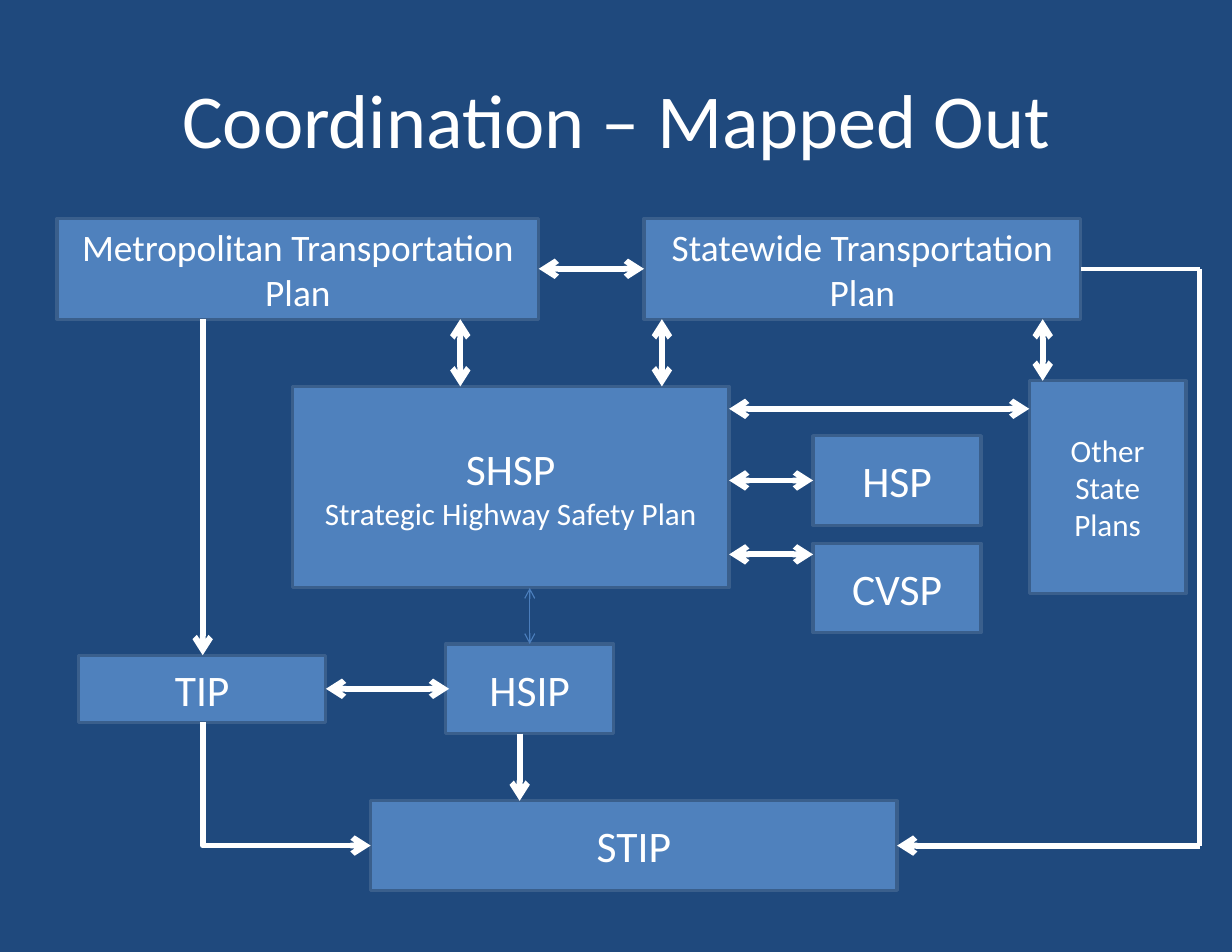
from lxml import etree
from pptx import Presentation
from pptx.dml.color import RGBColor
from pptx.enum.shapes import MSO_CONNECTOR, MSO_SHAPE
from pptx.enum.text import MSO_ANCHOR, PP_ALIGN
from pptx.oxml.ns import qn
from pptx.util import Pt

RECTANGLE = MSO_SHAPE.RECTANGLE
STRAIGHT, ELBOW = MSO_CONNECTOR.STRAIGHT, MSO_CONNECTOR.ELBOW
CENTER, MIDDLE = PP_ALIGN.CENTER, MSO_ANCHOR.MIDDLE

PX = 9144  # 100 px to the inch
FONT = "Calibri"
NAVY, BLUE, EDGE, THIN_BLUE, WHITE = "1F497D", "4F81BD", "3A5F8C", "4B7EBC", "FFFFFF"

# Left, top, width, height, then (text, size) for each paragraph
BOXES = [
    (575, 195, 390, 90, [("Statewide Transportation Plan", 24)]),
    (398, 575, 150, 80, [("HSIP", 28)]),
    (51, 195, 430, 90, [("Metropolitan Transportation Plan", 24)]),
    (261, 345, 390, 180, [("SHSP", 28), ("Strategic Highway Safety Plan", 20)]),
    (726, 389, 150, 80, [("HSP", 28)]),
    (919, 340, 140, 190, [("Other State", 20), ("Plans", 20)]),
    (726, 485, 150, 80, [("CVSP", 28)]),
    (70, 585, 221, 60, [("TIP", 28)]),
    (331, 715, 470, 80, [("STIP", 28)]),
]

# Start x, start y, end x, end y
TWO_WAY = [
    (575, 240, 481, 240),  # Statewide - Metropolitan
    (411, 285, 411, 345),  # Metropolitan - SHSP
    (591, 285, 591, 345),  # Statewide - SHSP
    (931, 285, 931, 340),  # Statewide - Other State Plans
    (651, 365, 919, 365),  # SHSP - Other State Plans
    (651, 429, 726, 429),  # SHSP - HSP
    (651, 495, 726, 495),  # SHSP - CVSP
    (401, 615, 291, 615),  # HSIP - TIP
]
ONE_WAY = [
    (181, 285, 181, 585),   # Metropolitan to TIP
    (464, 655, 464, 715),   # HSIP to STIP
    (1071, 755, 801, 755),  # Statewide to STIP, last leg
]


def px(*lengths):
    return [length * PX for length in lengths]


def color(hex_text):
    return RGBColor.from_string(hex_text)


def write(frame, lines):
    frame.text = "\n".join(text for text, size in lines)
    frame.word_wrap = True
    frame.vertical_anchor = MIDDLE
    for paragraph, (text, size) in zip(frame.paragraphs, lines):
        paragraph.alignment = CENTER
        for span in paragraph.runs:
            span.font.name = FONT
            span.font.size = Pt(size)
            span.font.color.rgb = color(WHITE)


def add_title(page, text):
    title = page.shapes.title
    title.left, title.top, title.width, title.height = px(55, 34, 990, 142)
    write(title.text_frame, [(text, 49)])


def add_box(page, left, top, width, height, lines):
    box = page.shapes.add_shape(RECTANGLE, *px(left, top, width, height))
    box.shadow.inherit = False
    box.fill.solid()
    box.fill.fore_color.rgb = color(BLUE)
    box.line.color.rgb = color(EDGE)
    box.line.width = Pt(2)
    write(box.text_frame, lines)


def add_line(page, ends, arrows=(), width=3.75, line_color=WHITE, kind=STRAIGHT):
    connector = page.shapes.add_connector(kind, *px(*ends))
    connector.line.color.rgb = color(line_color)
    connector.line.width = Pt(width)
    properties = connector._element.spPr
    for end in arrows:
        etree.SubElement(properties.find(qn("a:ln")), qn(f"a:{end}"), type="arrow")
    etree.SubElement(properties, qn("a:effectLst"))
    return connector


def add_corner(page):
    """Draw the TIP to STIP arrow: a one-corner elbow turned by 270 degrees."""
    corner = add_line(page, (311, 625, 201, 775), ["tailEnd"], kind=ELBOW)
    properties = corner._element.spPr
    properties.find(qn("a:xfrm")).set("rot", str(270 * 60000))
    properties.find(qn("a:prstGeom")).set("prst", "bentConnector2")


def main():
    deck = Presentation()
    deck.slide_width, deck.slide_height = px(1100, 850)
    page = deck.slides.add_slide(deck.slide_layouts[5])
    page.background.fill.solid()
    page.background.fill.fore_color.rgb = color(NAVY)

    # Title and plans
    add_title(page, "Coordination – Mapped Out")
    for left, top, width, height, lines in BOXES:
        add_box(page, left, top, width, height, lines)

    # Links between the plans
    for ends in TWO_WAY:
        add_line(page, ends, ["headEnd", "tailEnd"])
    for ends in ONE_WAY:
        add_line(page, ends, ["tailEnd"])
    add_line(page, (473, 525, 473, 575), ["headEnd", "tailEnd"], 0.75, THIN_BLUE)
    add_corner(page)

    # Statewide to STIP, first two legs
    add_line(page, (965, 240, 1071, 240), width=2.75)
    add_line(page, (1071, 240, 1071, 755))

    deck.save("out.pptx")


if __name__ == "__main__":
    main()
